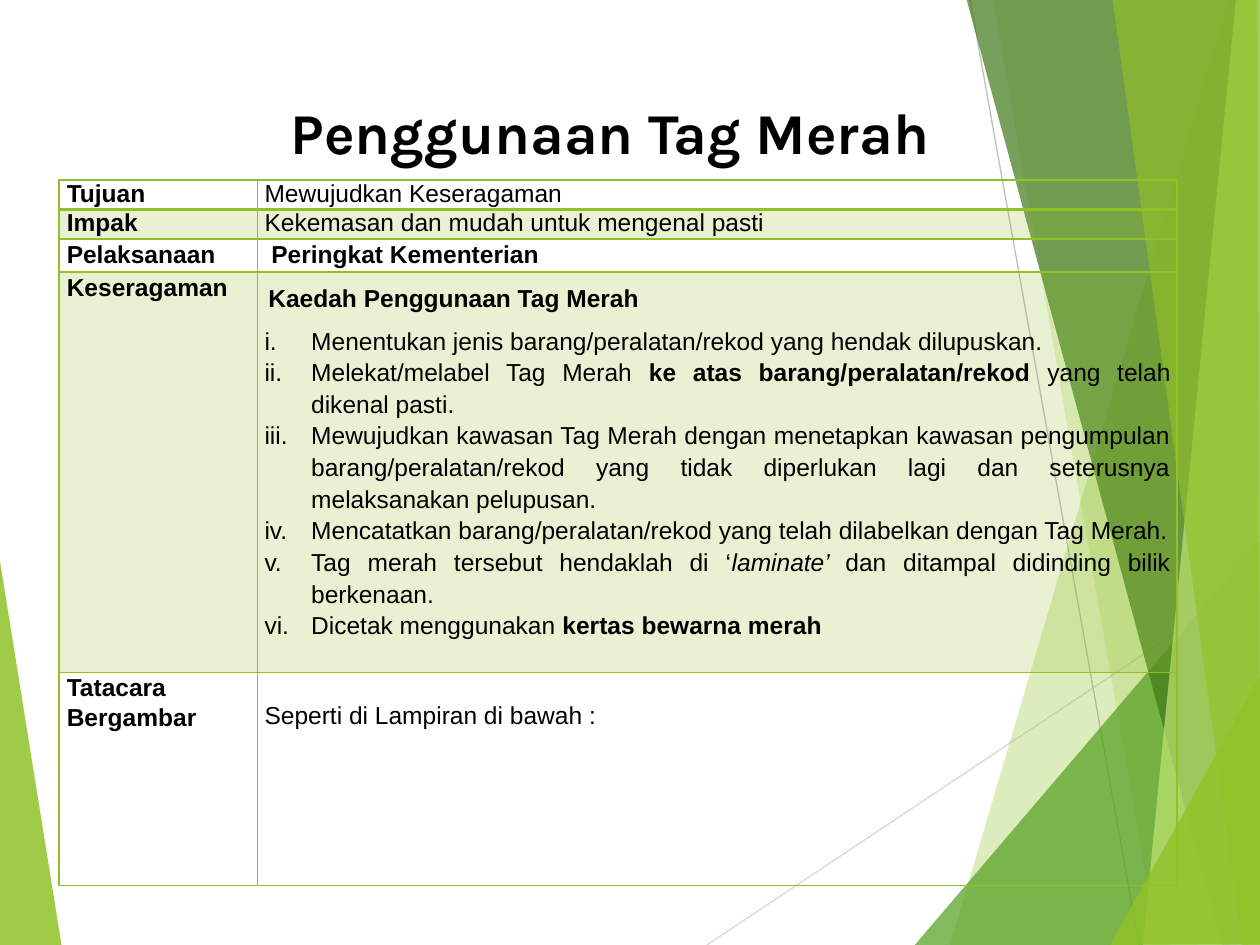
from lxml import etree
from pptx import Presentation
from pptx.dml.color import RGBColor
from pptx.enum.text import MSO_ANCHOR, PP_ALIGN
from pptx.enum.shapes import MSO_CONNECTOR
from pptx.oxml.ns import qn
from pptx.util import Inches, Pt

CENTER, JUSTIFY = PP_ALIGN.CENTER, PP_ALIGN.JUSTIFY
MIDDLE, STRAIGHT = MSO_ANCHOR.MIDDLE, MSO_CONNECTOR.STRAIGHT
GREEN, BLACK, GREY = "90C226", "000000", "A0A0A0"

WEDGE = ([(-0.01, 4.39), (0.49, 7.51), (-0.01, 7.5)], GREEN, 85)
RAYS = [
    ((5.61, 7.5), (10.01, 4.57), "D9D9D9"),
    ((7.7, 0), (9.04, 7.5), "BFBFBF"),
]
FACETS = [
    ([(9.75, 0), (7.54, 7.5), (10.02, 7.51), (10.01, 0.01)], GREEN, 30),
    ([(7.88, -0.01), (9.19, 7.5), (10.01, 7.5), (10.01, -0.01)], GREEN, 20),
    ([(7.26, 7.5), (10, 4.29), (10.01, 7.5)], "54A021", 72),
    ([(7.67, -0.01), (9.7, 7.5), (10.01, 7.49), (10.01, -0.01)], "3F7819", 70),
    ([(9.81, -0.01), (9.07, 7.5), (10.01, 7.5), (10, -0.01)], "C0E474", 70),
    ([(8.83, -0.01), (9.86, 7.5), (10, 7.5), (9.98, -0.01)], GREEN, 65),
    ([(8.81, 7.5), (10.01, 5.35), (10.01, 7.49)], GREEN, 80),
]
TITLE = "Penggunaan Tag Merah "
HEAD = "Kaedah Penggunaan Tag Merah"
STEPS = [
    [("Menentukan jenis barang/peralatan/rekod yang hendak dilupuskan.", "")],
    [("Melekat/melabel Tag Merah ", ""),
     ("ke atas barang/peralatan/rekod ", "b"),
     ("yang telah dikenal pasti.", "")],
    [("Mewujudkan kawasan Tag Merah dengan menetapkan kawasan pengumpulan "
      "barang/peralatan/rekod yang tidak diperlukan lagi dan seterusnya "
      "melaksanakan pelupusan.", "")],
    [("Mencatatkan barang/peralatan/rekod yang telah dilabelkan dengan Tag Merah.", "")],
    [("Tag merah tersebut hendaklah di ‘", ""), ("laminate’ ", "i"),
     ("dan ditampal didinding bilik berkenaan.", "")],
    [("Dicetak menggunakan ", ""), ("kertas bewarna merah", "b")],
]
ROWS = [
    ("Tujuan", [("Mewujudkan Keseragaman", "")], 0.23, 1.0),
    ("Impak", [("Kekemasan dan mudah untuk mengenal pasti", "")], 0.23, 1.0),
    ("Pelaksanaan", [(" Peringkat Kementerian", "b")], 0.26, 1.07),
    ("Keseragaman", [(HEAD, "b")], 3.18, 1.07),
    ("Tatacara Bergambar", [("Seperti di Lampiran di bawah :", "")], 1.69, 1.07),
]
COLS = [1.57, 7.3]


def rgb(code):
    return RGBColor.from_string(code)


def tint(fill, box, code, alpha):
    fill.solid()
    fill.fore_color.rgb = rgb(code)
    tone = next(box.iter(qn("a:srgbClr")))
    etree.SubElement(tone, qn("a:alpha"), val=str(alpha * 1000))


def facet(shapes, points, code, alpha):
    spots = [(Inches(x), Inches(y)) for x, y in points]
    pen = shapes.build_freeform(*spots[0])
    pen.add_line_segments(spots[1:], close=True)
    shape = pen.convert_to_shape()
    shape.shadow.inherit = False
    shape.line.fill.background()
    tint(shape.fill, shape.element.spPr, code, alpha)


def ray(shapes, start, end, code):
    line = shapes.add_connector(STRAIGHT, *map(Inches, start + end))
    line.line.color.rgb = rgb(code)
    line.line.width = Pt(0.75)
    etree.SubElement(line.element.spPr, qn("a:effectLst"))


def write(para, runs, gap, size=14, face="Arial"):
    para.line_spacing = gap
    para.font.size, para.font.name = Pt(size), face
    para.font.color.rgb = rgb(BLACK)
    for text, mark in runs:
        run = para.add_run()
        run.text = text
        run.font.bold = mark == "b"
        run.font.italic = mark == "i"


def indent(para, left, first):
    props = para._p.get_or_add_pPr()
    props.set("marL", str(Inches(left)))
    props.set("indent", str(Inches(first)))
    return props


def number(para):
    props = indent(para, 0.37, -0.37)
    mark = etree.Element(qn("a:buAutoNum"), type="romanLcPeriod")
    props.find(qn("a:defRPr")).addprevious(mark)
    para.alignment = JUSTIFY


def border(cell, edges):
    props = cell._tc.get_or_add_tcPr()
    for spot, (side, code, width) in enumerate(edges):
        line = etree.Element(qn("a:ln" + side), w=str(Pt(width)))
        fill = etree.SubElement(line, qn("a:solidFill"))
        etree.SubElement(fill, qn("a:srgbClr"), val=code)
        props.insert(spot, line)


def grid(shapes):
    high = [row[2] for row in ROWS]
    frame = shapes.add_table(len(ROWS), len(COLS), Inches(0.47), Inches(1.43),
                             Inches(sum(COLS)), Inches(sum(high)))
    table = frame.table
    table.first_row = table.horz_banding = False
    for col, width in zip(table.columns, COLS):
        col.width = Inches(width)
    for r, (label, runs, tall, gap) in enumerate(ROWS):
        table.rows[r].height = Inches(tall)
        for c, part in enumerate(([(label, "b")], runs)):
            cell = table.cell(r, c)
            cell.margin_left, cell.margin_right = Inches(0.06), Inches(0.05)
            cell.margin_top = cell.margin_bottom = 0
            write(cell.text_frame.paragraphs[0], part, gap)
            if r % 2:
                tint(cell.fill, cell._tc.get_or_add_tcPr(), GREEN, 20)
            else:
                cell.fill.background()
            outer, inner = (GREEN, 1), (GREY, 0.5)
            border(cell, [
                ("L", *(inner if c else outer)),
                ("R", *(outer if c else inner)),
                ("T", GREEN, 2 if r == 1 else 1),
                ("B", GREEN, 2 if r == 0 else 1),
            ])
    table.cell(4, 1).margin_top = Inches(0.22)
    body = table.cell(3, 1).text_frame
    head = body.paragraphs[0]
    head.line_spacing, head.space_after = 1.5, Pt(6)
    indent(head, 0.64, -0.61)
    for runs in STEPS:
        para = body.add_paragraph()
        write(para, runs, 1.15)
        number(para)


def main():
    deck = Presentation()
    deck.slide_width, deck.slide_height = Inches(10), Inches(7.5)
    shapes = deck.slides.add_slide(deck.slide_layouts[6]).shapes
    facet(shapes, *WEDGE)
    for item in RAYS:
        ray(shapes, *item)
    for item in FACETS:
        facet(shapes, *item)
    box = shapes.add_textbox(*map(Inches, (0.22, 0.79, 9.36, 0.57)))
    frame = box.text_frame
    frame.word_wrap, frame.vertical_anchor = True, MIDDLE
    title = frame.paragraphs[0]
    write(title, [(TITLE, "b")], 0.9, 33, "Karla")
    title.alignment = CENTER
    grid(shapes)
    deck.save("out.pptx")


if __name__ == "__main__":
    main()
